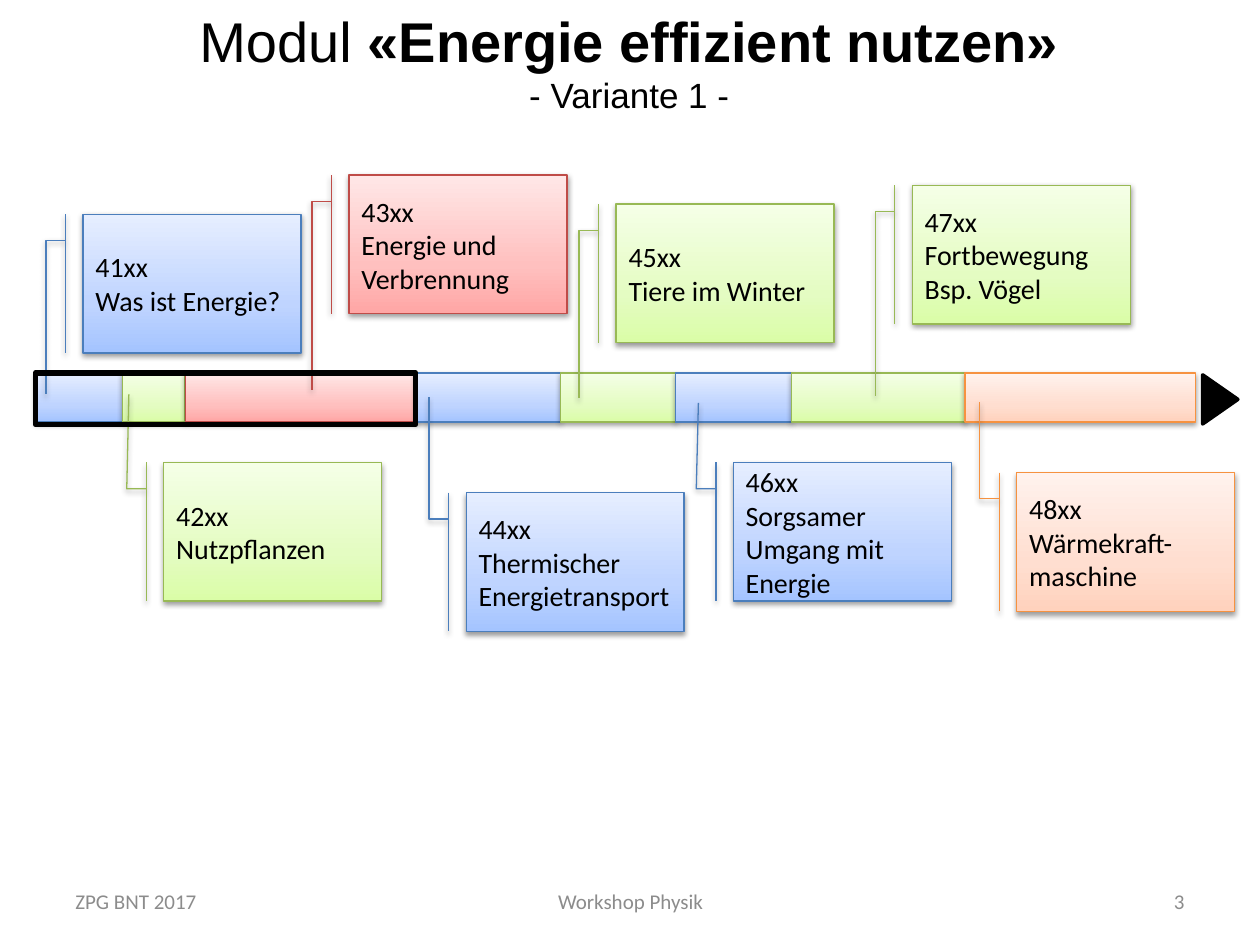
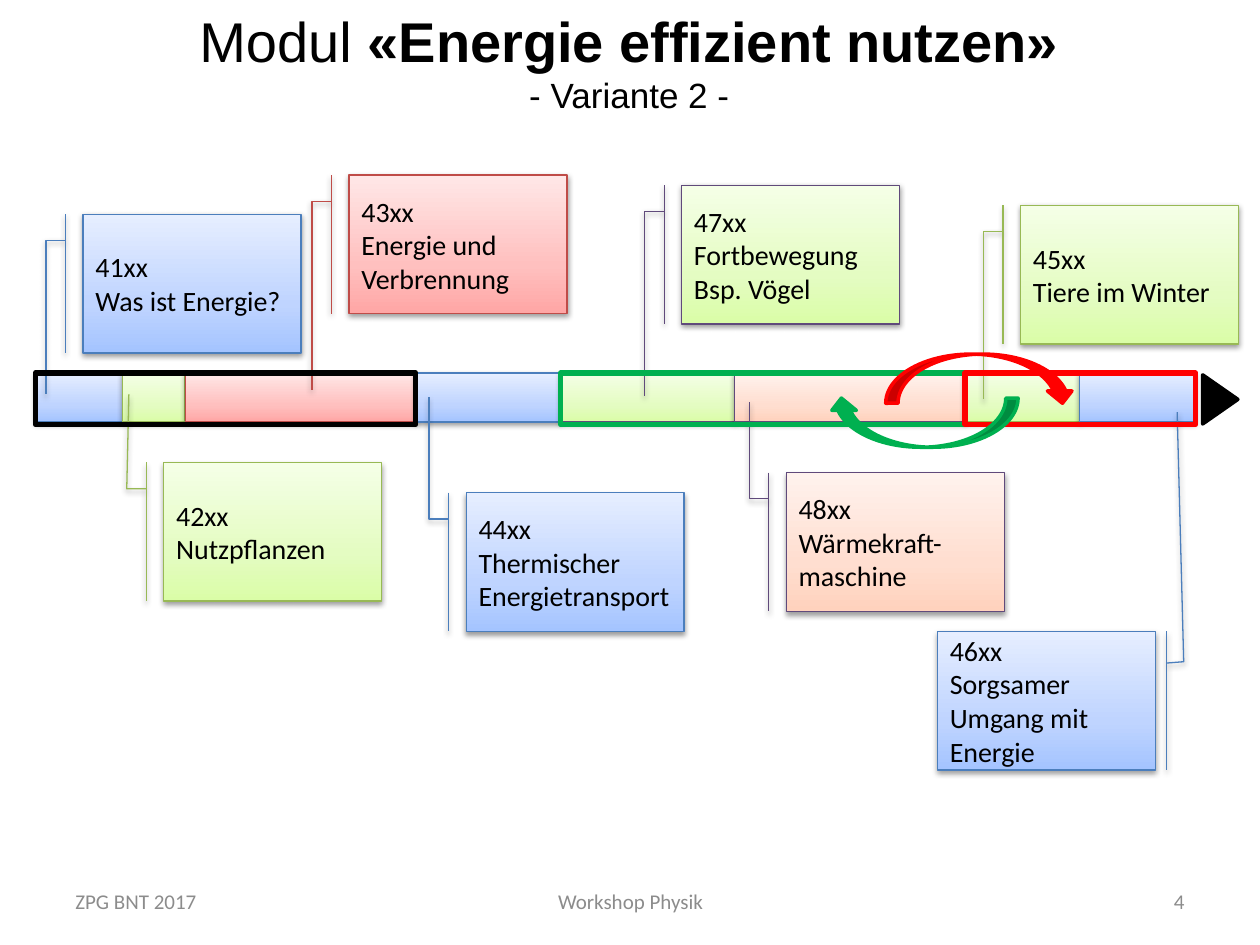
import copy
import dataclasses
import itertools

import pptx
import pptx.dml.color
import pptx.enum.shapes
import pptx.enum.text
import pptx.oxml
import pptx.oxml.ns
import pptx.util

RGBColor = pptx.dml.color.RGBColor
SHAPE = pptx.enum.shapes.MSO_SHAPE
ALIGN = pptx.enum.text.PP_ALIGN
ANCHOR = pptx.enum.text.MSO_ANCHOR

BLACK = RGBColor(0x00, 0x00, 0x00)
GREY = RGBColor(0x8C, 0x8C, 0x8C)
RED = RGBColor(0xFF, 0x00, 0x00)
GREEN = RGBColor(0x00, 0xB0, 0x50)
PURPLE_LINE = RGBColor(0x60, 0x4A, 0x7B)


@dataclasses.dataclass
class Palette:
    """Gradient colours from bottom to top, and the outline."""
    bottom: RGBColor
    middle: RGBColor
    top: RGBColor
    line: RGBColor


PHYSICS = Palette(RGBColor(0xA4, 0xC4, 0xFF), RGBColor(0xBF, 0xD4, 0xFF),
                  RGBColor(0xE6, 0xEE, 0xFF), RGBColor(0x4B, 0x7E, 0xBC))
BIOLOGY = Palette(RGBColor(0xDA, 0xFD, 0xA7), RGBColor(0xE4, 0xFC, 0xC2),
                  RGBColor(0xF5, 0xFF, 0xE7), RGBColor(0x98, 0xB9, 0x55))
CHEMISTRY = Palette(RGBColor(0xFF, 0xA6, 0xA5), RGBColor(0xFF, 0xC0, 0xBF),
                    RGBColor(0xFF, 0xE7, 0xE7), RGBColor(0xBF, 0x4C, 0x48))
ENGINEERING = Palette(RGBColor(0xFF, 0xD2, 0xBD), RGBColor(0xFF, 0xDE, 0xD0),
                      RGBColor(0xFF, 0xF2, 0xED), RGBColor(0xF6, 0x92, 0x40))
BIOLOGY_MOVED = dataclasses.replace(BIOLOGY, line=PURPLE_LINE)
ENGINEERING_MOVED = dataclasses.replace(ENGINEERING, line=PURPLE_LINE)

# All positions and sizes are percentages of the slide's width and height.
SLIDE_WIDTH = pptx.util.Inches(10)
SLIDE_HEIGHT = pptx.util.Inches(7.5)
BAR_LEFT, BAR_TOP, BAR_HEIGHT = 2.8, 39.47, 5.2
FRAME_HEIGHT = 5.47
CALLOUT_WIDTH, CALLOUT_HEIGHT = 17.3, 14.67
LEFT_ELBOW = (0.19, -0.08, 0.19, -0.17)
RIGHT_ELBOW = (0.23, 1.05, 0.22, 1.13)


@dataclasses.dataclass
class Topic:
    """A bar segment and its callout; tail is (y, x) in callout sizes."""
    lines: tuple
    palette: Palette
    length: float
    left: float
    top: float
    tail: tuple
    elbow: tuple = LEFT_ELBOW


COMMON_START = [
    Topic(("41xx", "Was ist Energie?"), PHYSICS, 6.9, 6.6, 22.67, (1.3, -0.17)),
    Topic(("42xx", "Nutzpflanzen"), BIOLOGY, 5, 13, 48.93, (-0.49, -0.16)),
    Topic(("43xx", "Energie und Verbrennung"), CHEMISTRY, 18.3, 27.7, 18.53,
          (1.55, -0.17)),
    Topic(("44xx", "Thermischer Energietransport"), PHYSICS, 11.5, 37, 52.13,
          (-0.69, -0.17)),
]
WINTER = Topic(("45xx", "Tiere im Winter"), BIOLOGY, 9.1, 48.9, 21.6, (1.4, -0.17))
SAVING = Topic(("46xx", "Sorgsamer Umgang mit Energie"), PHYSICS, 9.2, 58.2, 48.93,
               (-0.43, -0.16))
MOTION = Topic(("47xx", "Fortbewegung", "Bsp. Vögel"), BIOLOGY, 13.8, 72.4, 19.6,
               (1.52, -0.17))
HEAT_ENGINE = Topic(("48xx", "Wärmekraft-maschine"), ENGINEERING, 18.3, 80.7, 50,
                    (-0.51, -0.17))

VARIANT_1 = COMMON_START + [WINTER, SAVING, MOTION, HEAT_ENGINE]
VARIANT_2 = COMMON_START + [
    dataclasses.replace(MOTION, palette=BIOLOGY_MOVED, left=54.1),
    dataclasses.replace(HEAT_ENGINE, palette=ENGINEERING_MOVED, left=62.4),
    dataclasses.replace(WINTER, left=81, top=21.73),
    dataclasses.replace(SAVING, left=74.4, top=66.8, tail=(-1.58, 1.1),
                        elbow=RIGHT_ELBOW),
]


def to_lengths(left, top, width, height):
    """Turn percentages of the slide into lengths."""
    return (int(SLIDE_WIDTH * left / 100), int(SLIDE_HEIGHT * top / 100),
            int(SLIDE_WIDTH * width / 100), int(SLIDE_HEIGHT * height / 100))


def add_shape(slide, kind, box, line_color, line_width, fill_color=None):
    shape = slide.shapes.add_shape(kind, *to_lengths(*box))
    shape.shadow.inherit = False
    shape.line.color.rgb = line_color
    shape.line.width = pptx.util.Pt(line_width)
    if fill_color is None:
        shape.fill.background()
    else:
        shape.fill.solid()
        shape.fill.fore_color.rgb = fill_color
    return shape


def add_gradient_shape(slide, kind, box, palette):
    """Add a shape with a three-stop gradient and a soft shadow below it."""
    shape = add_shape(slide, kind, box, palette.line, 0.75)
    shape.fill.gradient()
    shape.fill.gradient_angle = 90
    properties = shape._element.spPr
    stop_list = properties.find(".//" + pptx.oxml.ns.qn("a:gsLst"))
    stop_list.append(copy.deepcopy(stop_list[0]))
    colors = (palette.bottom, palette.middle, palette.top)
    for stop, color, position in zip(shape.fill.gradient_stops, colors, (0, 0.35, 1)):
        stop.color.rgb = color
        stop.position = position
    properties.find(pptx.oxml.ns.qn("a:effectLst")).append(pptx.oxml.parse_xml(
        f'<a:outerShdw {pptx.oxml.ns.nsdecls("a")} blurRad="40000" dist="20000" '
        'dir="5400000" rotWithShape="0"><a:srgbClr val="000000">'
        '<a:alpha val="38000"/></a:srgbClr></a:outerShdw>'))
    return shape


def add_run(paragraph, text, size, font, color, bold=False):
    run = paragraph.add_run()
    run.text = text
    run.font.size = pptx.util.Pt(size)
    run.font.name = font
    run.font.color.rgb = color
    run.font.bold = bold


def add_callout(slide, topic):
    box = (topic.left, topic.top, CALLOUT_WIDTH, CALLOUT_HEIGHT)
    shape = add_gradient_shape(
        slide, SHAPE.LINE_CALLOUT_2_BORDER_AND_ACCENT_BAR, box, topic.palette)
    for index, value in enumerate(topic.elbow + topic.tail):
        shape.adjustments[index] = value
    frame = shape.text_frame
    frame.word_wrap = True
    frame.vertical_anchor = ANCHOR.MIDDLE
    for index, line in enumerate(topic.lines):
        paragraph = frame.add_paragraph() if index else frame.paragraphs[0]
        paragraph.alignment = ALIGN.LEFT
        add_run(paragraph, line, 16, "Calibri", BLACK)


def add_title(slide, variant):
    frame = slide.shapes.add_textbox(*to_lengths(14.6, 0, 70.7, 13.07)).text_frame
    frame.word_wrap = False
    frame.auto_size = pptx.enum.text.MSO_AUTO_SIZE.SHAPE_TO_FIT_TEXT
    title, subtitle = frame.paragraphs[0], frame.add_paragraph()
    title.alignment = subtitle.alignment = ALIGN.CENTER
    add_run(title, "Modul", 32, "Arial", BLACK)
    add_run(title, " «Energie effizient nutzen»", 32, "Arial", BLACK, bold=True)
    add_run(subtitle, f"- Variante {variant} -", 20, "Arial", BLACK)


def add_footer(slide, number):
    for left, width, alignment, text in (
            (5, 23.3, ALIGN.LEFT, "ZPG BNT 2017"),
            (34.2, 31.7, ALIGN.CENTER, "Workshop Physik"),
            (71.7, 23.3, ALIGN.RIGHT, str(number))):
        frame = slide.shapes.add_textbox(
            *to_lengths(left, 92.67, width, 5.33)).text_frame
        frame.word_wrap = True
        frame.vertical_anchor = ANCHOR.MIDDLE
        frame.paragraphs[0].alignment = alignment
        add_run(frame.paragraphs[0], text, 12, "Calibri", GREY)


def add_timeline(slide, topics, frames):
    """Draw the bar, its callouts and the frames (first edge, last edge, colour)."""
    edges = list(itertools.accumulate(
        (topic.length for topic in topics), initial=BAR_LEFT))
    for topic, left in zip(topics, edges):
        add_gradient_shape(slide, SHAPE.RECTANGLE,
                           (left, BAR_TOP, topic.length, BAR_HEIGHT), topic.palette)
    arrowhead = add_shape(slide, SHAPE.ISOSCELES_TRIANGLE,
                          (edges[-1], 40.4, 3.9, 3.73), BLACK, 2, BLACK)
    arrowhead.rotation = 90
    for topic in topics:
        add_callout(slide, topic)
    for first, last, color in frames:
        box = (edges[first], BAR_TOP, edges[last] - edges[first], FRAME_HEIGHT)
        add_shape(slide, SHAPE.RECTANGLE, box, color, 3)


def add_swap_arrow(slide, left, top, color, rotation):
    arrow = add_shape(slide, SHAPE.CURVED_DOWN_ARROW, (left, top, 15, 5.2),
                      color, 2, color)
    arrow.rotation = rotation


def add_variant_slide(presentation, variant, number, topics, frames):
    slide = presentation.slides.add_slide(presentation.slide_layouts[6])
    add_title(slide, variant)
    add_timeline(slide, topics, frames)
    add_footer(slide, number)
    return slide


def main():
    presentation = pptx.Presentation()
    presentation.slide_width = SLIDE_WIDTH
    presentation.slide_height = SLIDE_HEIGHT
    start_frame = (0, 3, BLACK)
    add_variant_slide(presentation, 1, 3, VARIANT_1, [start_frame])
    slide = add_variant_slide(presentation, 2, 4, VARIANT_2,
                              [start_frame, (4, 6, GREEN), (6, 8, RED)])
    add_swap_arrow(slide, 70.3, 37.47, RED, 0)
    add_swap_arrow(slide, 65.8, 42.13, GREEN, 180)
    presentation.save("out.pptx")


if __name__ == "__main__":
    main()
